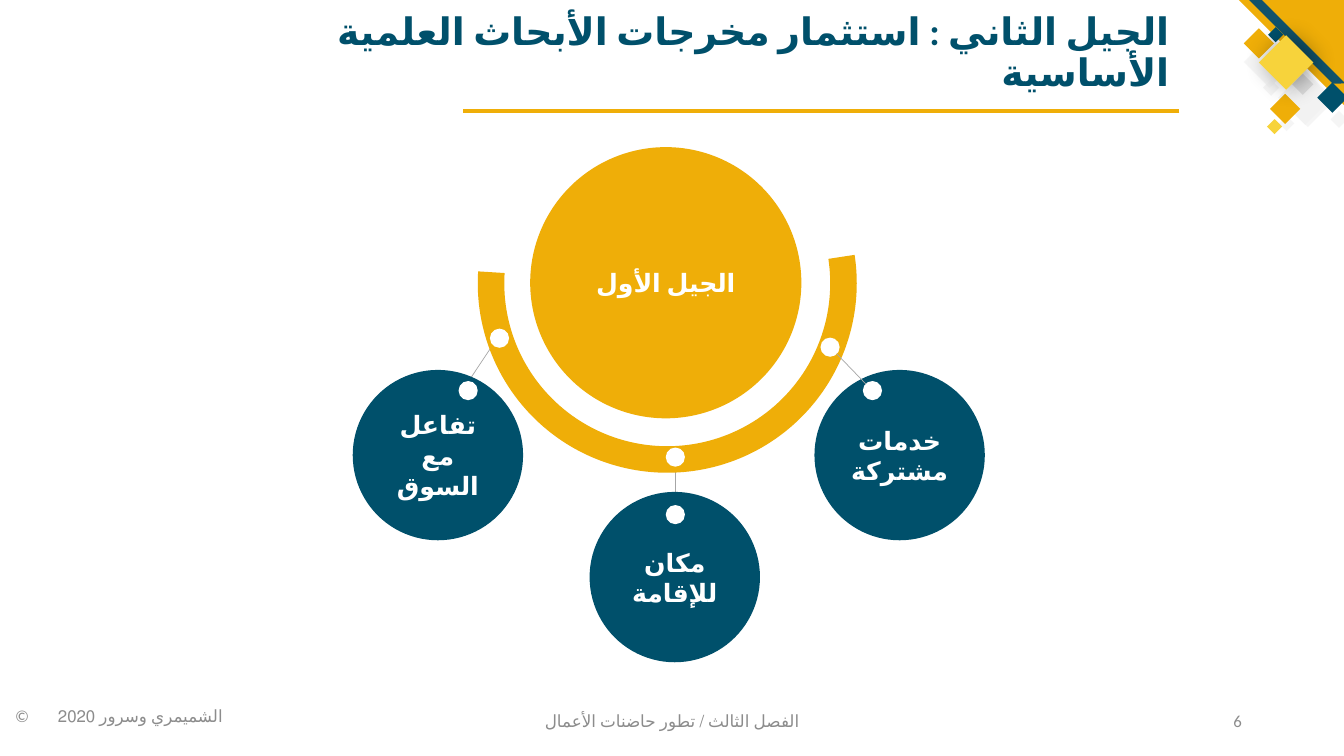
import pptx
import pptx.dml.color
import pptx.enum.lang
import pptx.enum.shapes
import pptx.enum.text
import pptx.oxml
import pptx.oxml.ns
import pptx.util
from lxml import etree

Pt = pptx.util.Pt
color = pptx.dml.color.RGBColor.from_string
Shape = pptx.enum.shapes.MSO_SHAPE
Align = pptx.enum.text.PP_ALIGN
Anchor = pptx.enum.text.MSO_ANCHOR
ARABIC = pptx.enum.lang.MSO_LANGUAGE_ID.ARABIC
qn = pptx.oxml.ns.qn

GOLD, TEAL, YELLOW = "EFAE08", "00506B", "F7D33B"
WHITE, PALE, GREY, TEXT_GREY = "FFFFFF", "F2F2F2", "A6A6A6", "8C8C8C"

deck = pptx.Presentation()
deck.slide_width, deck.slide_height = Pt(960), Pt(540)
page = deck.slides.add_slide(deck.slide_layouts[5])


def draw(kind, left, top, width, height, fill, opacity=100):
    shape = page.shapes.add_shape(kind, Pt(left), Pt(top), Pt(width), Pt(height))
    shape.shadow.inherit = False
    shape.fill.solid()
    shape.fill.fore_color.rgb = color(fill)
    shape.line.fill.background()
    if opacity < 100:
        fill_color = shape.fill._xPr.find(".//" + qn("a:srgbClr"))
        etree.SubElement(fill_color, qn("a:alpha"), val=str(opacity * 1000))
    return shape


def connect(start_x, start_y, end_x, end_y, stroke, width):
    line = page.shapes.add_connector(
        pptx.enum.shapes.MSO_CONNECTOR.STRAIGHT,
        Pt(start_x), Pt(start_y), Pt(end_x), Pt(end_y))
    line.line.color.rgb = color(stroke)
    line.line.width = Pt(width)
    etree.SubElement(line._element.spPr, qn("a:effectLst"))


# Title rule and the two links that run under the circles
connect(842.4, 79.2, 330.5, 79.2, GOLD, 3)
connect(334.8, 272.2, 352.1, 246.2, GREY, 0.5)
connect(482.4, 360.7, 482.4, 319.7, GREY, 0.5)

# Corner decoration: diamonds behind the triangle, the band, diamonds in front
for left, top, size, fill, opacity in [
    (913, 50.4, 38.9, PALE, 72),
    (950.4, 79.2, 12.2, PALE, 72),
    (915.8, 54, 36.7, PALE, 72),
    (913.7, 82.8, 10.8, PALE, 72),
    (902.2, 56.9, 11.5, PALE, 72),
    (888.5, 25.9, 36.7, PALE, 72),
    (888.5, 20.2, 21.6, GOLD, 100),
]:
    draw(Shape.DIAMOND, left, top, size, size, fill, opacity)

corner = draw(Shape.RIGHT_TRIANGLE, 884.9, 0, 79.2, 79.2, GOLD)
corner.rotation = 180
band = draw(Shape.PARALLELOGRAM, 881.3, 26.6, 90.7, 6.5, "11526A")
band.adjustments[0] = 0.98
band.rotation = 45

for left, top, size, fill, opacity in [
    (941, 59, 21.6, TEAL, 100),
    (907.2, 67, 21.6, GOLD, 100),
    (905.8, 19.4, 10.8, TEAL, 100),
    (905, 85, 10.8, YELLOW, 100),
    (923, 52.6, 15.1, "D9D9D9", 92),
    (899.3, 25.2, 38.9, YELLOW, 100),
]:
    diamond = draw(Shape.DIAMOND, left, top, size, size, fill, opacity)

# Soft shadow on the large front diamond
effects = diamond._element.spPr.find(qn("a:effectLst"))
shadow = etree.SubElement(effects, qn("a:outerShdw"), blurRad=str(Pt(17)),
                          dist=str(Pt(3)), dir="0", algn="ctr", rotWithShape="0")
shadow_color = etree.SubElement(shadow, qn("a:srgbClr"), val="000000")
etree.SubElement(shadow_color, qn("a:alpha"), val="40000")

# Central circle and its arc
heading = {"size": Pt(18), "bold": True}
texts = []
hub = draw(Shape.OVAL, 378.7, 105.1, 193.7, 193.7, GOLD)
texts.append((hub, "الجيل الأول", heading, WHITE, Align.CENTER))
arc = draw(Shape.BLOCK_ARC, 341.3, 67, 270.7, 270.7, GOLD)
for index, value in enumerate([210.83, 110.16, 0.07]):
    arc.adjustments[index] = value

# Outer circles, each with a dot inside and a dot on the arc (centres)
DISC, DOT = 121.7, 13.7
for label, disc, inner_dot, arc_dot in [
    ("خدمات مشتركة", (642.6, 325.1), (623.2, 279), (592.9, 248)),
    ("مكان للإقامة", (482, 412.2), (482.4, 367.6), (482.4, 326.5)),
    ("تفاعل مع السوق", (312.8, 325.1), (334.4, 279), (356.8, 241.6)),
]:
    for (x, y), size, fill in [(disc, DISC, TEAL), (inner_dot, DOT, WHITE),
                               (arc_dot, DOT, WHITE)]:
        circle = draw(Shape.OVAL, x - size / 2, y - size / 2, size, size, fill)
        if size == DISC:
            texts.append((circle, label, heading, WHITE, Align.CENTER))
connect(618.5, 274.3, 597.6, 252.7, GREY, 0.5)

# Title
title = page.shapes.title
title.left, title.top, title.width, title.height = Pt(116.6), Pt(36.7), Pt(725.8), Pt(34.6)
texts.append((title, "الجيل الثاني : استثمار مخرجات الأبحاث العلمية الأساسية",
              {"size": Pt(27), "bold": True}, TEAL, Align.RIGHT))

# Footer
for label, left, top, width, height, align in [
    ("©\tالشميمري وسرور 2020", 0, 493.2, 169.2, 36, Align.LEFT),
    ("الفصل الثالث / تطور حاضنات الأعمال", 318.2, 500.4, 324, 28.8, Align.CENTER),
    ("6", 678.2, 500.4, 216, 28.8, Align.RIGHT),
]:
    box = page.shapes.add_textbox(Pt(left), Pt(top), Pt(width), Pt(height))
    texts.append((box, label, {"size": Pt(12)}, TEXT_GREY, align))

# Write and format every text
for box, label, font_format, fill, align in texts:
    frame = box.text_frame
    frame.word_wrap = True
    frame.auto_size = pptx.enum.text.MSO_AUTO_SIZE.NONE
    frame.vertical_anchor = Anchor.MIDDLE
    para = frame.paragraphs[0]
    para.alignment = align
    if "\t" in label:
        frame.margin_left = Pt(10.8)
        tabs = etree.SubElement(para._p.get_or_add_pPr(), qn("a:tabLst"))
        etree.SubElement(tabs, qn("a:tab"), pos=str(Pt(30.6)), algn="l")
    span = para.add_run()
    span.text = label
    for name, value in {"name": "Calibri", "language_id": ARABIC, **font_format}.items():
        setattr(span.font, name, value)
    span.font.color.rgb = color(fill)
    if span.font.bold:
        etree.SubElement(span._r.get_or_add_rPr(), qn("a:cs"), typeface="Calibri")

title.text_frame.vertical_anchor = Anchor.BOTTOM
title_para = title.text_frame.paragraphs[0]
title_para.line_spacing = 0.9
title_para._p.get_or_add_pPr().set("rtl", "1")

deck.save("out.pptx")
